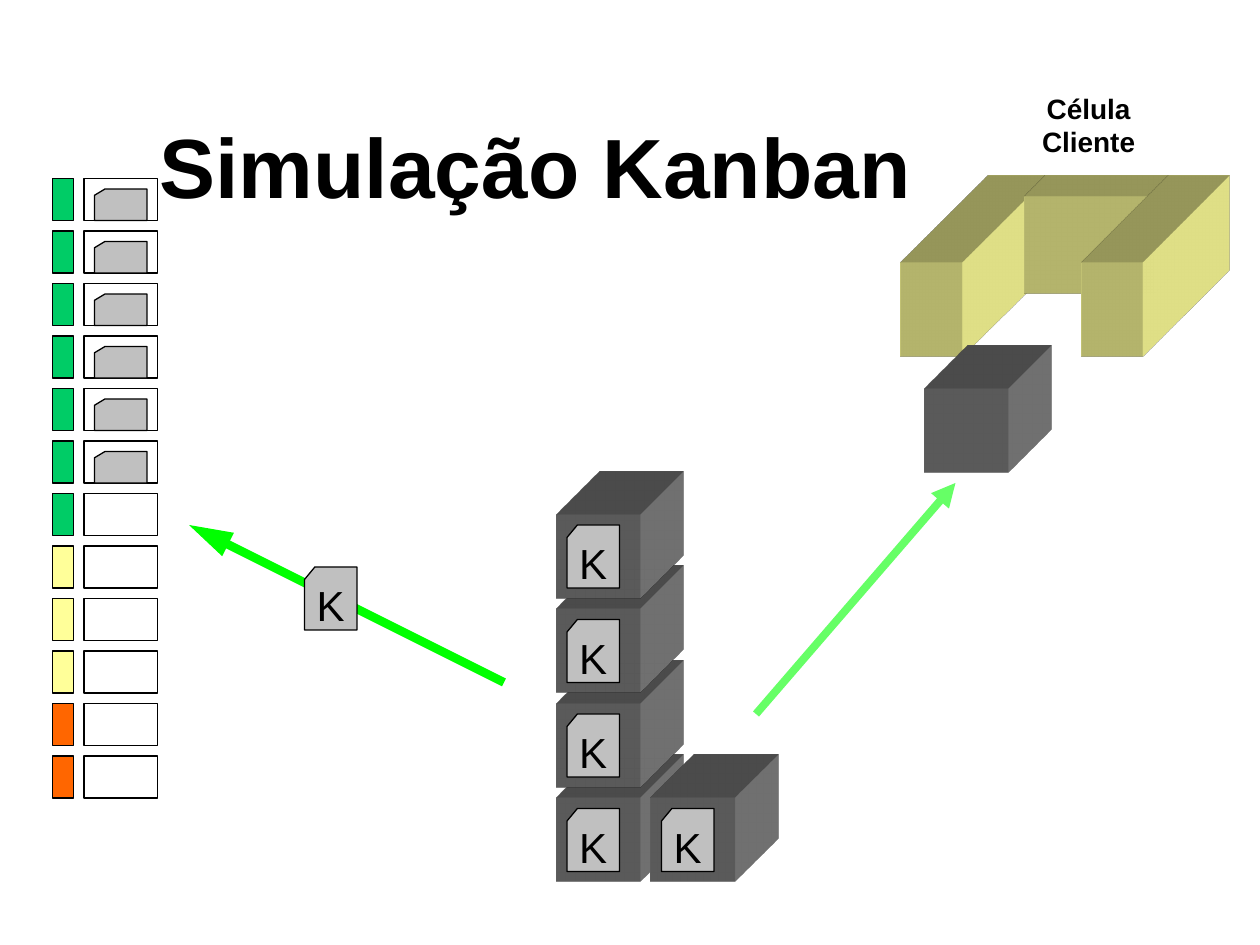
from dataclasses import dataclass
from typing import Optional

from lxml import etree
from pptx import Presentation
from pptx.dml.color import RGBColor
from pptx.enum.shapes import MSO_CONNECTOR, MSO_SHAPE
from pptx.enum.text import MSO_ANCHOR, MSO_AUTO_SIZE, PP_ALIGN
from pptx.oxml import parse_xml
from pptx.oxml.ns import nsdecls, qn
from pptx.util import Inches, Length, Pt

RECTANGLE = MSO_SHAPE.RECTANGLE
CARD = MSO_SHAPE.FLOWCHART_CARD
STRAIGHT = MSO_CONNECTOR.STRAIGHT
CENTER = PP_ALIGN.CENTER
MIDDLE = MSO_ANCHOR.MIDDLE
TOP = MSO_ANCHOR.TOP
NO_AUTOFIT = MSO_AUTO_SIZE.NONE
GROW = MSO_AUTO_SIZE.SHAPE_TO_FIT_TEXT
TITLE_ONLY = 5


@dataclass(frozen=True)
class Theme:
    font: str = "Arial"
    ink: str = "000000"
    card: str = "C0C0C0"
    crate: str = "808080"
    green: str = "00CC66"
    yellow: str = "FFFF99"
    orange: str = "FF6600"
    return_arrow: str = "00FF00"
    delivery_arrow: str = "66FF66"
    title_size: int = 48
    card_size: int = 24
    label_size: int = 16
    outline: float = 0.75


@dataclass(frozen=True)
class Box:
    left: float
    top: float
    width: float
    height: float

    def lengths(self) -> tuple[Length, ...]:
        return tuple(Inches(value) for value in (self.left, self.top, self.width, self.height))


@dataclass(frozen=True)
class Arrow:
    start: tuple[float, float]
    end: tuple[float, float]
    color: str
    width: float
    head_length: str


@dataclass(frozen=True)
class Block:
    box: Box
    depth: float


THEME = Theme()
BOARD_COLORS = [THEME.green] * 7 + [THEME.yellow] * 3 + [THEME.orange] * 2
CARDS_ON_BOARD = 6
CELL_BLOCKS = [
    Block(Box(7.15, 2.08, 0.49, 0.75), 1.95),
    Block(Box(8.13, 1.56, 1.03, 0.77), 0.47),
    Block(Box(8.58, 2.08, 0.49, 0.75), 1.95),
]
CRATE_DEPTH = 0.97
STOCK_CRATES = [(53, 76), (53, 67), (53, 58), (53, 49), (62, 76)]
DELIVERED_CRATE = (88, 37)
LOOSE_CARD = (29, 54)
RETURN_ARROW = Arrow((48, 65), (18, 50), THEME.return_arrow, 5, "lg")
DELIVERY_ARROW = Arrow((72, 68), (91, 46), THEME.delivery_arrow, 4.5, "med")


def grid_box(left: float, top: float, width: float, height: float) -> Box:
    return Box(left / 12, top / 12, width / 12, height / 12)


def add_text(paragraph, text: str, size: int, bold: bool = False) -> None:
    paragraph.alignment = CENTER
    run = paragraph.add_run()
    run.text = text
    run.font.name = THEME.font
    run.font.size = Pt(size)
    run.font.bold = bold
    run.font.color.rgb = RGBColor.from_string(THEME.ink)


def add_figure(slide, kind, box: Box, fill: Optional[str], outlined: bool = True):
    shape = slide.shapes.add_shape(kind, *box.lengths())
    shape.shadow.inherit = False
    if fill:
        shape.fill.solid()
        shape.fill.fore_color.rgb = RGBColor.from_string(fill)
    else:
        shape.fill.background()
    if outlined:
        shape.line.color.rgb = RGBColor.from_string(THEME.ink)
        shape.line.width = Pt(THEME.outline)
    else:
        shape.line.fill.background()
    return shape


def add_block(slide, block: Block, color: str) -> None:
    shape = add_figure(slide, RECTANGLE, block.box, color, outlined=False)
    properties = shape.element.spPr
    properties.append(parse_xml(
        f'<a:scene3d {nsdecls("a")}><a:camera prst="legacyObliqueTopRight"/>'
        '<a:lightRig rig="legacyFlat3" dir="b"/></a:scene3d>'))
    properties.append(parse_xml(
        f'<a:sp3d {nsdecls("a")} extrusionH="{Inches(block.depth)}" prstMaterial="legacyMatte">'
        '<a:bevelT w="13500" h="13500" prst="angle"/><a:bevelB w="13500" h="13500" prst="angle"/>'
        f'<a:extrusionClr><a:srgbClr val="{color}"/></a:extrusionClr></a:sp3d>'))


def add_kanban_card(slide, left: float, top: float) -> None:
    card = add_figure(slide, CARD, grid_box(left, top, 5, 6), THEME.card)
    frame = card.text_frame
    frame.word_wrap = False
    frame.vertical_anchor = MIDDLE
    add_text(frame.paragraphs[0], "K", THEME.card_size)


def add_crate(slide, left: float, top: float) -> None:
    add_block(slide, Block(grid_box(left, top, 8, 8), CRATE_DEPTH), THEME.crate)


def add_arrow(slide, arrow: Arrow) -> None:
    points = [Inches(value / 12) for value in arrow.start + arrow.end]
    connector = slide.shapes.add_connector(STRAIGHT, *points)
    connector.line.color.rgb = RGBColor.from_string(arrow.color)
    connector.line.width = Pt(arrow.width)
    properties = connector.element.spPr
    etree.SubElement(properties.get_or_add_ln(), qn("a:tailEnd"),
                     type="triangle", w="med", len=arrow.head_length)
    etree.SubElement(properties, qn("a:effectLst"))


def add_title(slide) -> None:
    title = slide.shapes.title
    title.left, title.top, title.width, title.height = Box(0, 0.8, 8.5, 1.11).lengths()
    frame = title.text_frame
    frame.auto_size = NO_AUTOFIT
    frame.vertical_anchor = TOP
    frame.margin_left = frame.margin_right = Inches(0.09)
    frame.margin_top = Inches(0.11)
    add_text(frame.paragraphs[0], "Simulação Kanban", THEME.title_size, bold=True)


def add_board(slide) -> None:
    for row, color in enumerate(BOARD_COLORS):
        top = 17 + 5 * row
        add_figure(slide, RECTANGLE, grid_box(5, top, 2, 4), color)
        add_figure(slide, RECTANGLE, grid_box(8, top, 7, 4), None)
        if row < CARDS_ON_BOARD:
            add_figure(slide, CARD, grid_box(9, top + 1, 5, 3), THEME.card)


def add_client_cell(slide) -> None:
    for block in CELL_BLOCKS:
        add_block(slide, block, THEME.yellow)
    label = slide.shapes.add_textbox(*Box(8.17, 0.67, 0.94, 0.64).lengths())
    frame = label.text_frame
    frame.word_wrap = False
    frame.auto_size = GROW
    frame.vertical_anchor = MIDDLE
    add_text(frame.paragraphs[0], "Célula", THEME.label_size, bold=True)
    add_text(frame.add_paragraph(), "Cliente", THEME.label_size, bold=True)


def main() -> None:
    presentation = Presentation()
    presentation.slide_width = Inches(10)
    presentation.slide_height = Inches(7.5)
    slide = presentation.slides.add_slide(presentation.slide_layouts[TITLE_ONLY])
    add_title(slide)
    add_board(slide)
    add_client_cell(slide)
    for left, top in STOCK_CRATES:
        add_crate(slide, left, top)
        add_kanban_card(slide, left + 1, top + 1)
    add_crate(slide, *DELIVERED_CRATE)
    add_arrow(slide, RETURN_ARROW)
    add_kanban_card(slide, *LOOSE_CARD)
    add_arrow(slide, DELIVERY_ARROW)
    presentation.save("out.pptx")


if __name__ == "__main__":
    main()
